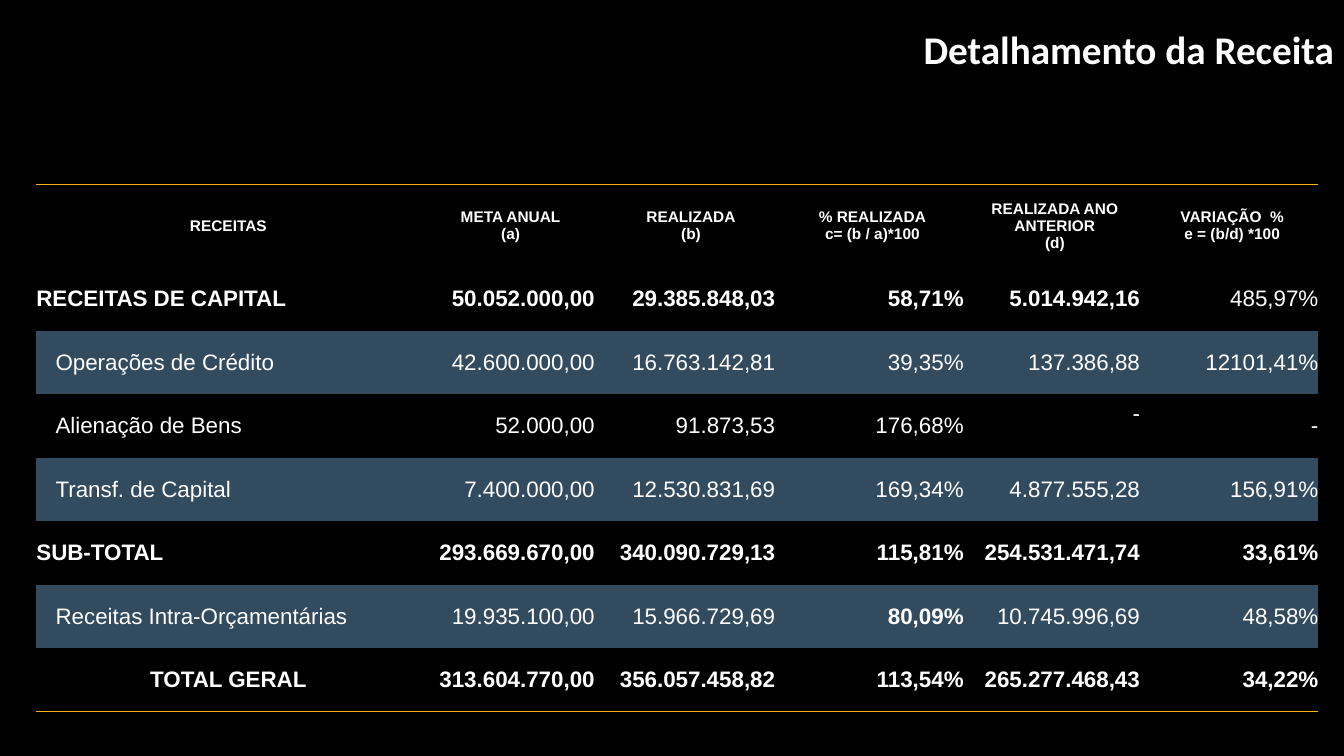
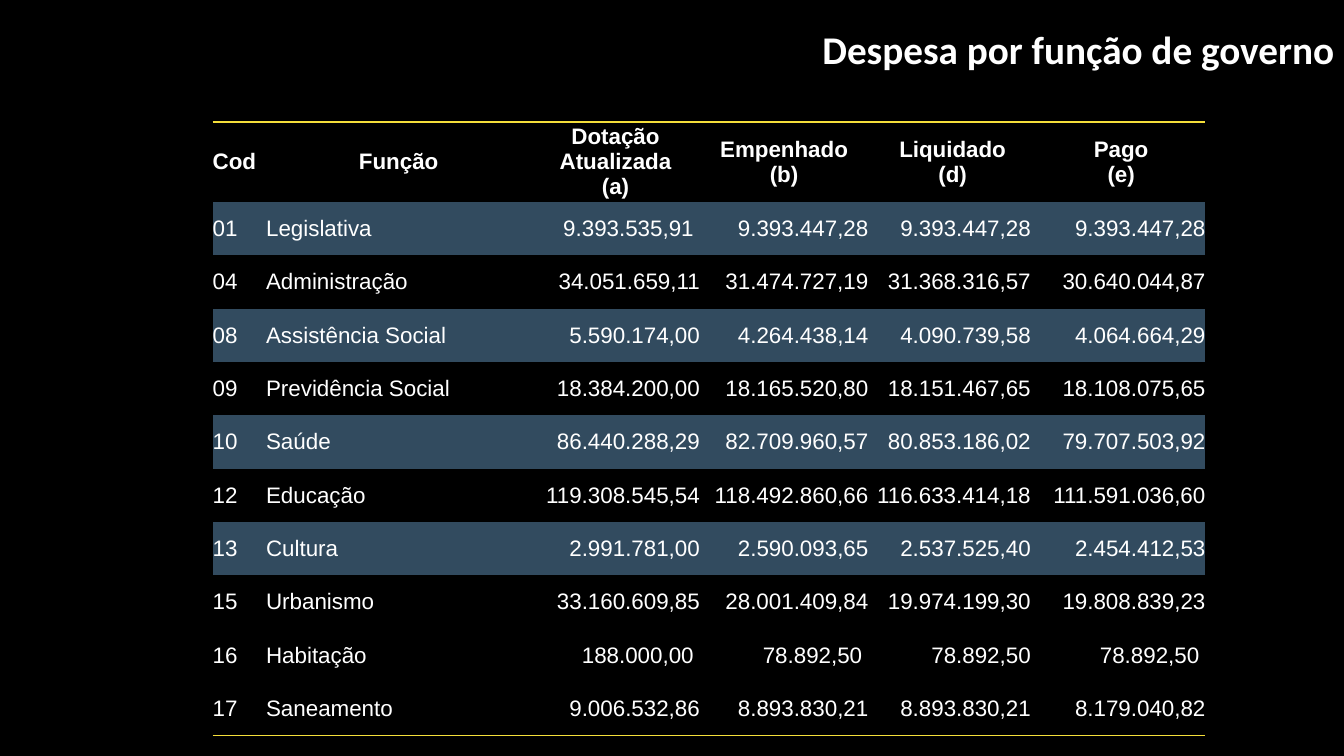
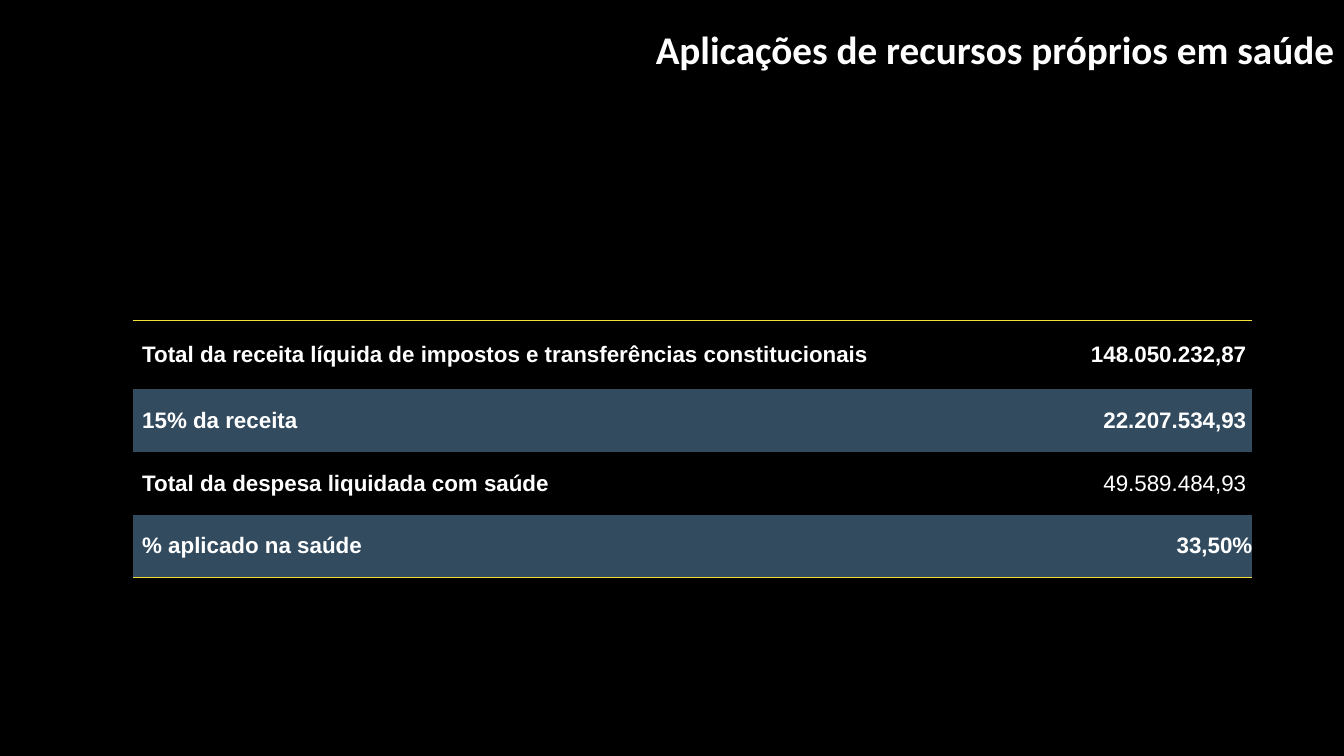
from lxml.etree import SubElement
from pptx import Presentation
from pptx.dml.color import RGBColor
from pptx.enum.text import MSO_ANCHOR, MSO_AUTO_SIZE, PP_ALIGN
from pptx.oxml.ns import qn
from pptx.util import Pt

COLORS = {
    "background": "000000",
    "text": "FFFFFF",
    "band": "324B5F",
    "orange": "FCB11C",
    "yellow": "F4DE3A",
}
TITLE_FONT = "Calibri"
TABLE_FONT = "Arial"
SLIDE_WIDTH = 960
SLIDE_HEIGHT = 540
PLAIN_TABLE_STYLE = "{2D5ABB26-0587-4C30-8999-92F81FD0307C}"
VALUE_PAD = 4.4
LEFT, CENTER, RIGHT = PP_ALIGN.LEFT, PP_ALIGN.CENTER, PP_ALIGN.RIGHT

REVENUE = [
    ("RECEITAS", "META ANUAL\n(a)", "REALIZADA\n(b)", "% REALIZADA\nc= (b / a)*100",
     "REALIZADA ANO ANTERIOR\n(d)", "VARIAÇÃO  %\ne = (b/d) *100"),
    ("RECEITAS DE CAPITAL", "50.052.000,00", "29.385.848,03", "58,71%", "5.014.942,16", "485,97%"),
    ("Operações de Crédito", "42.600.000,00", "16.763.142,81", "39,35%", "137.386,88", "12101,41%"),
    ("Alienação de Bens", "52.000,00", "91.873,53", "176,68%", "-", "-"),
    ("Transf. de Capital", "7.400.000,00", "12.530.831,69", "169,34%", "4.877.555,28", "156,91%"),
    ("SUB-TOTAL", "293.669.670,00", "340.090.729,13", "115,81%", "254.531.471,74", "33,61%"),
    ("Receitas Intra-Orçamentárias", "19.935.100,00", "15.966.729,69", "80,09%", "10.745.996,69", "48,58%"),
    ("TOTAL GERAL", "313.604.770,00", "356.057.458,82", "113,54%", "265.277.468,43", "34,22%"),
]
EXPENSES = [
    ("Cod", "Função", "Dotação Atualizada\n(a)", "Empenhado\n(b)", "Liquidado\n(d)", "Pago\n(e)"),
    ("01", "Legislativa", "9.393.535,91", "9.393.447,28", "9.393.447,28", "9.393.447,28"),
    ("04", "Administração", "34.051.659,11", "31.474.727,19", "31.368.316,57", "30.640.044,87"),
    ("08", "Assistência Social", "5.590.174,00", "4.264.438,14", "4.090.739,58", "4.064.664,29"),
    ("09", "Previdência Social", "18.384.200,00", "18.165.520,80", "18.151.467,65", "18.108.075,65"),
    ("10", "Saúde", "86.440.288,29", "82.709.960,57", "80.853.186,02", "79.707.503,92"),
    ("12", "Educação", "119.308.545,54", "118.492.860,66", "116.633.414,18", "111.591.036,60"),
    ("13", "Cultura", "2.991.781,00", "2.590.093,65", "2.537.525,40", "2.454.412,53"),
    ("15", "Urbanismo", "33.160.609,85", "28.001.409,84", "19.974.199,30", "19.808.839,23"),
    ("16", "Habitação", "188.000,00", "78.892,50", "78.892,50", "78.892,50"),
    ("17", "Saneamento", "9.006.532,86", "8.893.830,21", "8.893.830,21", "8.179.040,82"),
]
HEALTH = [
    ("Total da receita líquida de impostos e transferências constitucionais", "148.050.232,87"),
    ("15% da receita", "22.207.534,93"),
    ("Total da despesa liquidada com saúde", "49.589.484,93"),
    ("% aplicado na saúde", "33,50%"),
]


def color(name):
    return RGBColor.from_string(COLORS[name])


def format_text(frame, align, font_name, size, bold):
    for paragraph in frame.paragraphs:
        paragraph.alignment = align
        for run in paragraph.runs:
            run.font.name = font_name
            run.font.size = Pt(size)
            run.font.bold = bold
            run.font.color.rgb = color("text")


def add_titled_slide(prs, heading, left):
    slide = prs.slides.add_slide(prs.slide_layouts[5])
    title = slide.shapes.title
    title.left, title.top = Pt(left), Pt(14.4)
    title.width, title.height = Pt(SLIDE_WIDTH - left), Pt(41)
    frame = title.text_frame
    frame.text = heading
    frame.word_wrap = True
    frame.auto_size = MSO_AUTO_SIZE.NONE
    frame.vertical_anchor = MSO_ANCHOR.TOP
    format_text(frame, RIGHT, TITLE_FONT, 28, True)
    return slide


def add_rule(cell, side, rule):
    line = SubElement(cell._tc.get_or_add_tcPr(), qn(f"a:{side}"), w=str(Pt(1)))
    fill = SubElement(line, qn("a:solidFill"))
    SubElement(fill, qn("a:srgbClr"), val=COLORS[rule])


def add_finance_table(slide, origin, widths, heights, rows, rule, banded, style_cell):
    left, top = origin
    frame = slide.shapes.add_table(
        len(rows), len(widths), Pt(left), Pt(top), Pt(sum(widths)), Pt(sum(heights)))
    table = frame.table
    table.first_row = table.horz_banding = False
    table._tbl.tblPr.find(qn("a:tableStyleId")).text = PLAIN_TABLE_STYLE
    for column, width in zip(table.columns, widths):
        column.width = Pt(width)
    for r, (row, height, values) in enumerate(zip(table.rows, heights, rows)):
        row.height = Pt(height)
        for c, (cell, value) in enumerate(zip(row.cells, values)):
            look = {"align": LEFT, "size": 16, "bold": False, "pad_left": 0,
                    "pad_right": 0, "pad_bottom": 0, **style_cell(r, c)}
            cell.text_frame.text = value
            cell.vertical_anchor = MSO_ANCHOR.MIDDLE
            cell.margin_left, cell.margin_right = Pt(look["pad_left"]), Pt(look["pad_right"])
            cell.margin_top, cell.margin_bottom = 0, Pt(look["pad_bottom"])
            format_text(cell.text_frame, look["align"], TABLE_FONT, look["size"], look["bold"])
            if r == 0:
                add_rule(cell, "lnT", rule)
            if r == len(rows) - 1:
                add_rule(cell, "lnB", rule)
            if r in banded:
                cell.fill.solid()
                cell.fill.fore_color.rgb = color("band")
            else:
                cell.fill.background()


def style_revenue(r, c):
    capital, disposals, subtotal, intra, total = 1, 3, 5, 6, 7
    if r == 0:
        return {"align": CENTER, "size": 11, "bold": True}
    summary = r in (capital, subtotal, total)
    if c == 0:
        return {"align": CENTER if r == total else LEFT, "bold": summary,
                "pad_left": 0 if summary else 13.7}
    return {
        "align": RIGHT,
        "bold": (summary and (r, c) != (capital, 5)) or (r, c) == (intra, 3),
        "pad_right": VALUE_PAD if c in (1, 2, 4) else 0,
        "pad_bottom": 18 if (r, c) == (disposals, 4) else 0,
    }


def style_expenses(r, c):
    legislative, housing = 1, 9
    if r == 0:
        return {"align": CENTER if c else LEFT, "bold": True}
    if c < 2:
        return {}
    padded = c == 4 or r == housing or (r, c) == (legislative, 2)
    return {"align": RIGHT, "pad_right": VALUE_PAD if padded else 0}


def style_health(r, c):
    spent, share = 2, 3
    if c == 0:
        return {"bold": True, "pad_left": 6.6}
    return {"align": RIGHT, "bold": r != spent, "pad_right": 0 if r == share else VALUE_PAD}


def add_revenue_slide(prs):
    slide = add_titled_slide(prs, "Detalhamento da Receita", 353.5)
    add_finance_table(slide, (26, 131.8), [274.3, 128.9, 128.9, 130.3, 130.3, 123.1],
                      [59] + [45.4] * 7, REVENUE, "orange", (2, 4, 6), style_revenue)


def add_expenses_slide(prs):
    slide = add_titled_slide(prs, "Despesa por função de governo", 353.5)
    add_finance_table(slide, (151.9, 87.1), [38.2, 189.4] + [120.4] * 4,
                      [57.2] + [38.1] * 10, EXPENSES, "yellow", (1, 3, 5, 7), style_expenses)


def add_health_slide(prs):
    slide = add_titled_slide(prs, "Aplicações de recursos próprios em saúde", 192)
    add_finance_table(slide, (95, 229), [554, 245.6], [49] + [44.9] * 3,
                      HEALTH, "yellow", (1, 3), style_health)


def main():
    prs = Presentation()
    prs.slide_width, prs.slide_height = Pt(SLIDE_WIDTH), Pt(SLIDE_HEIGHT)
    backdrop = prs.slide_master.background.fill
    backdrop.solid()
    backdrop.fore_color.rgb = color("background")
    add_revenue_slide(prs)
    add_expenses_slide(prs)
    add_health_slide(prs)
    prs.save("out.pptx")


if __name__ == "__main__":
    main()
